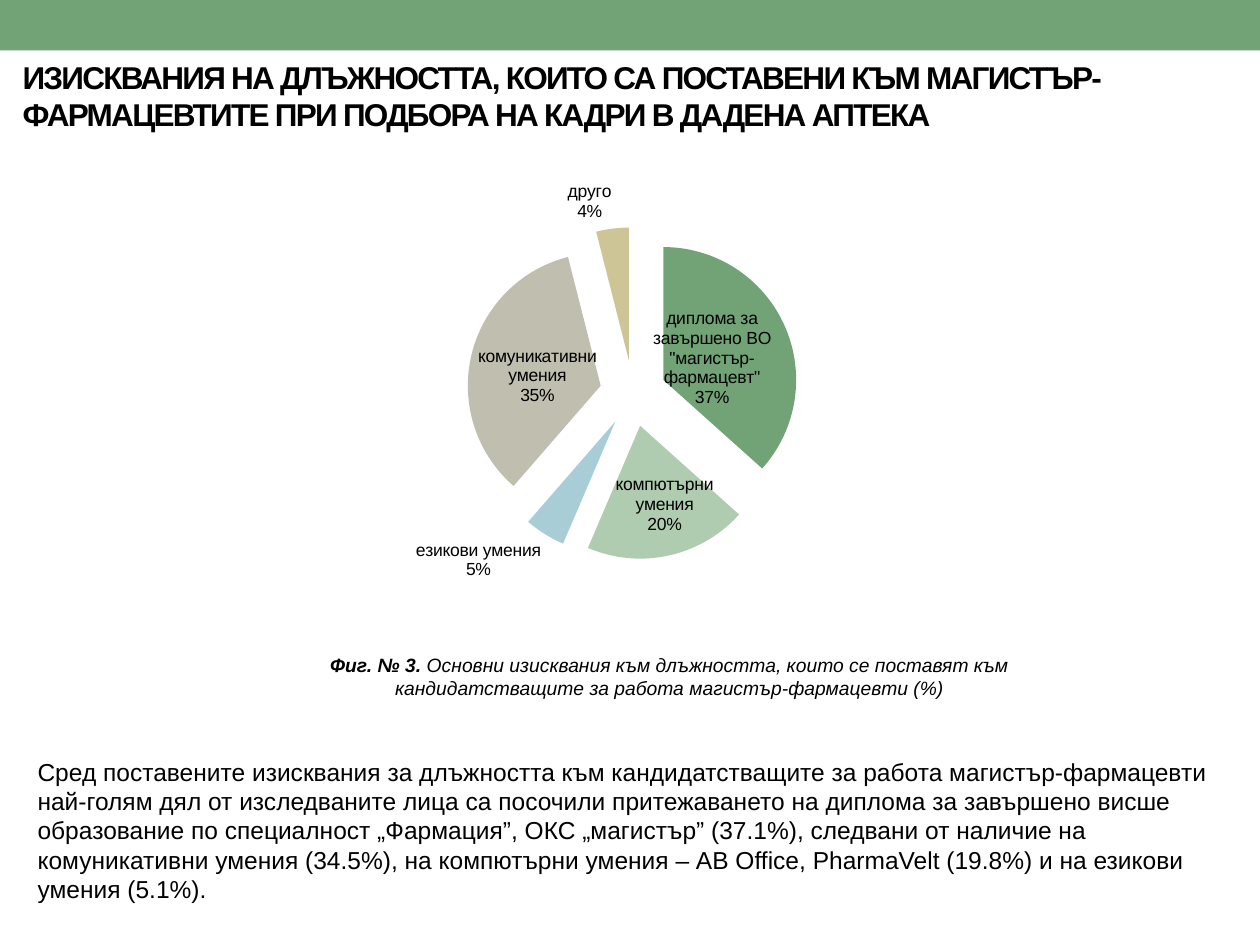
from lxml import etree
from pptx import Presentation
from pptx.chart.data import CategoryChartData
from pptx.dml.color import RGBColor
from pptx.enum.chart import XL_CHART_TYPE as CT, XL_LABEL_POSITION as LP
from pptx.enum.shapes import MSO_SHAPE as SHP
from pptx.enum.text import MSO_ANCHOR as ANC, PP_ALIGN as AL
from pptx.oxml import parse_xml
from pptx.oxml.ns import nsdecls, qn
from pptx.util import Pt

FONT = "Arial"
COLORS = {
    "text": "000000", "green": "72A376", "mint": "B0CCB0",
    "blue": "A8CDD7", "grey": "C0BEAF", "sand": "CEC597",
}
SKILLS = [
    ('диплома за завършено ВО "магистър-фармацевт"', 37, "green"),
    ("компютърни умения", 20, "mint"),
    ("езикови умения", 5, "blue"),
    ("комуникативни умения", 35, "grey"),
    ("друго", 4, "sand"),
]
EXPLOSION = 25
PIE_SIDE = 152
PIE_SHIFT = 1.8

TITLE = ("ИЗИСКВАНИЯ НА ДЛЪЖНОСТТА, КОИТО СА ПОСТАВЕНИ КЪМ МАГИСТЪР-ФАРМАЦЕВТИТЕ "
         "ПРИ ПОДБОРА НА КАДРИ В ДАДЕНА АПТЕКА")
CAPTION = (" Основни изисквания към длъжността, които се поставят към "
           "кандидатстващите за работа магистър-фармацевти (%)")
BODY = ("Сред поставените изисквания за длъжността към кандидатстващите за работа "
        "магистър-фармацевти най-голям дял от изследваните лица са посочили "
        "притежаването на диплома за завършено висше образование по специалност "
        "„Фармация”, ОКС „магистър” (37.1%), следвани от наличие на комуникативни "
        "умения (34.5%), на компютърни умения – AB Office, PharmaVelt (19.8%) и на "
        "езикови умения (5.1%).")


def rgb(name):
    return RGBColor.from_string(COLORS[name])


def style_font(font, **formats):
    font.name = FONT
    font.color.rgb = rgb("text")
    for attr, value in formats.items():
        setattr(font, attr, value)


def add_band(slide, box):
    sp = slide.shapes.add_shape(SHP.RECTANGLE, *map(Pt, box))
    sp.shadow.inherit = False
    sp.fill.solid()
    sp.fill.fore_color.rgb = rgb("green")
    sp.line.fill.background()


def add_text(slide, box, runs, align=AL.LEFT, anchor=ANC.TOP):
    """Place one paragraph made of (text, font formats) runs; return it."""
    tf = slide.shapes.add_textbox(*map(Pt, box)).text_frame
    tf.word_wrap = True
    tf.vertical_anchor = anchor
    p = tf.paragraphs[0]
    p.alignment = align
    for text, formats in runs:
        r = p.add_run()
        r.text = text
        style_font(r.font, **formats)
    return p


def add_title(slide, box):
    p = add_text(slide, box, [(TITLE, {"size": Pt(18), "bold": True})], anchor=ANC.MIDDLE)
    p.runs[0].font._element.set("spc", "-100")


def center_plot(chart, width, height):
    """Fix the plot to a square near the middle of the chart."""
    w, h = PIE_SIDE / width, PIE_SIDE / height
    parts = {"x": (1 - w) / 2 + PIE_SHIFT / width, "y": (1 - h) / 2, "w": w, "h": h}
    values = "".join(f'<c:{k} val="{v:.3f}"/>' for k, v in parts.items())
    layout = parse_xml(
        f'<c:layout {nsdecls("c")}><c:manualLayout><c:layoutTarget val="inner"/>'
        f'<c:xMode val="edge"/><c:yMode val="edge"/>{values}</c:manualLayout></c:layout>')
    area = chart._chartSpace.chart.plotArea
    for old in area.findall(qn("c:layout")):
        area.remove(old)
    area.insert(0, layout)


def add_pie(slide, box):
    data = CategoryChartData()
    data.categories = [name for name, _, _ in SKILLS]
    data.add_series("Series 1", [value for _, value, _ in SKILLS])
    chart = slide.shapes.add_chart(CT.PIE, *map(Pt, box), data).chart
    chart.has_legend = chart.has_title = False
    style_font(chart.font, size=Pt(10))
    center_plot(chart, *box[2:])

    plot = chart.plots[0]
    plot.vary_by_categories = True
    series = plot.series[0]
    for i, (_, _, color) in enumerate(SKILLS):
        fill = series.points[i].format.fill
        fill.solid()
        fill.fore_color.rgb = rgb(color)
    for point in series._element.findall(qn("c:dPt")):
        explosion = etree.Element(qn("c:explosion"), val=str(EXPLOSION))
        point.find(qn("c:spPr")).addprevious(explosion)

    labels = series.data_labels
    formats = {"show_category_name": True, "show_percentage": True, "show_value": False,
               "number_format": "0%", "number_format_is_linked": False,
               "position": LP.BEST_FIT}
    for attr, value in formats.items():
        setattr(labels, attr, value)
    style_font(labels.font, size=Pt(10))
    separator = etree.Element(qn("c:separator"))
    separator.text = "\n"
    labels._element.find(qn("c:showBubbleSize")).addnext(separator)


def add_caption(slide, box):
    italic = {"size": Pt(11), "italic": True}
    add_text(slide, box, [("Фиг. № 3.", {**italic, "bold": True}), (CAPTION, italic)],
             align=AL.CENTER)


def add_body(slide, box):
    add_text(slide, box, [(BODY, {"size": Pt(14)})])


def main():
    prs = Presentation()
    prs.slide_width, prs.slide_height = Pt(720), Pt(540)
    slide = prs.slides.add_slide(prs.slide_layouts[6])
    add_band(slide, (0, 0, 720, 28.8))
    add_title(slide, (5.8, 26, 686, 57))
    add_pie(slide, (119, 94.3, 481.7, 261.4))
    add_caption(slide, (139, 369.8, 487.4, 33.8))
    add_body(slide, (14.4, 428.8, 692, 96.5))
    prs.save("out.pptx")


if __name__ == "__main__":
    main()
